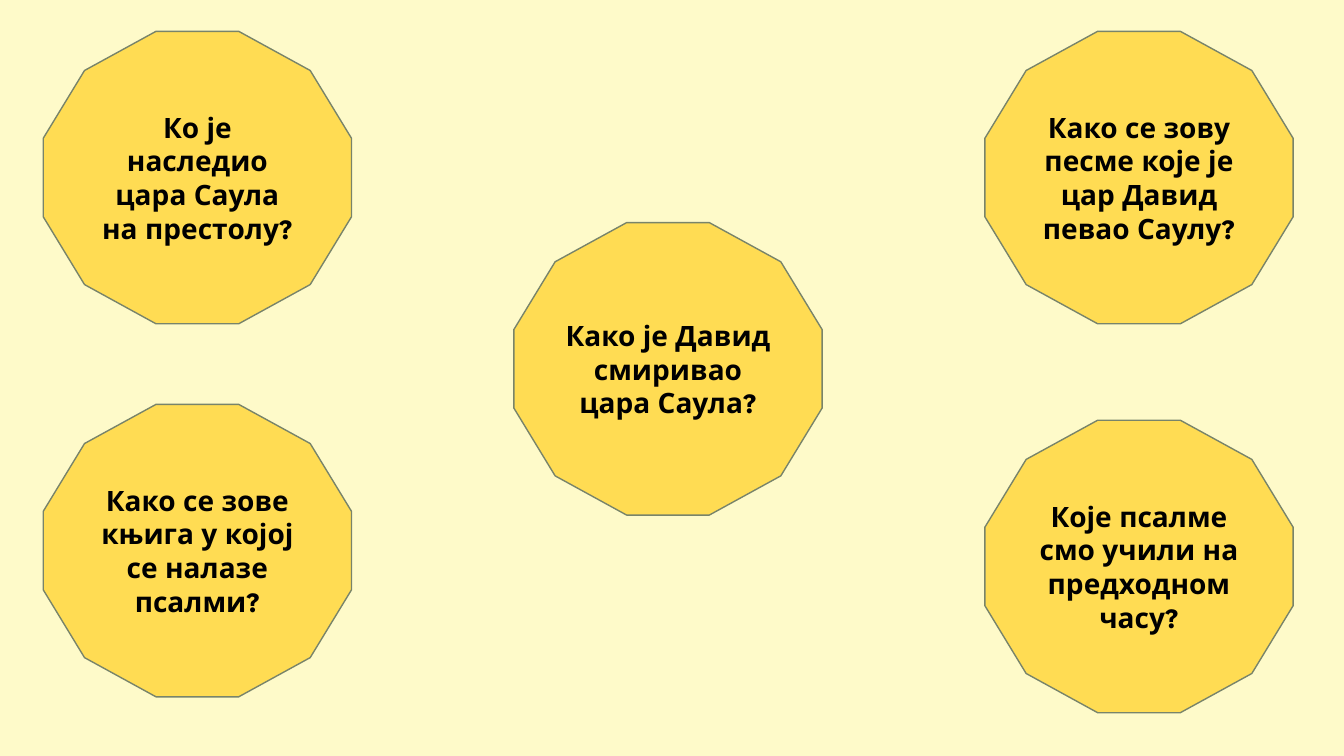
from dataclasses import dataclass

from pptx import Presentation
from pptx.dml.color import RGBColor
from pptx.enum.shapes import MSO_SHAPE
from pptx.enum.text import MSO_ANCHOR, PP_ALIGN
from pptx.slide import Slide
from pptx.util import Cm, Pt

COLORS = {
    "background": "FEFAC9",
    "badge": "FFDC53",
    "outline": "78846A",
    "text": "000000",
}
FONT = "League Spartan"
BADGE_WIDTH, BADGE_HEIGHT = 7.77, 7.37
LEFT, MIDDLE, RIGHT = 1.09, 12.95, 24.82
TOP = 0.79


@dataclass(frozen=True)
class Question:
    wording: str
    left: float
    top: float


QUESTIONS = [
    Question("Ко је наследио цара Саула на престолу?", LEFT, TOP),
    Question("Које псалме смо учили на предходном часу?", RIGHT, 10.59),
    Question("Како се зове књига у којој се налазе псалми?", LEFT, 10.19),
    Question("Како је Давид смиривао цара Саула?", MIDDLE, 5.61),
    Question("Како се зову песме које је цар Давид певао Саулу?", RIGHT, TOP),
]


def color(part: str) -> RGBColor:
    return RGBColor.from_string(COLORS[part])


def add_question(slide: Slide, question: Question) -> None:
    badge = slide.shapes.add_shape(
        MSO_SHAPE.DODECAGON,
        Cm(question.left), Cm(question.top), Cm(BADGE_WIDTH), Cm(BADGE_HEIGHT),
    )
    badge.shadow.inherit = False
    badge.fill.solid()
    badge.fill.fore_color.rgb = color("badge")
    badge.line.color.rgb = color("outline")
    badge.line.width = Pt(1)

    wording = badge.text_frame
    wording.text = question.wording
    wording.word_wrap = True
    wording.vertical_anchor = MSO_ANCHOR.MIDDLE
    sentence = wording.paragraphs[0]
    sentence.alignment = PP_ALIGN.CENTER
    font = sentence.runs[0].font
    font.name = FONT
    font.size = Pt(20)
    font.bold = True
    font.color.rgb = color("text")


def main() -> None:
    """Build the slide of review questions about David and Saul."""
    presentation = Presentation()
    presentation.slide_width = Cm(33.87)
    presentation.slide_height = Cm(19.05)
    slide = presentation.slides.add_slide(presentation.slide_layouts[6])
    slide.background.fill.solid()
    slide.background.fill.fore_color.rgb = color("background")
    for question in QUESTIONS:
        add_question(slide, question)
    presentation.save("out.pptx")


if __name__ == "__main__":
    main()
